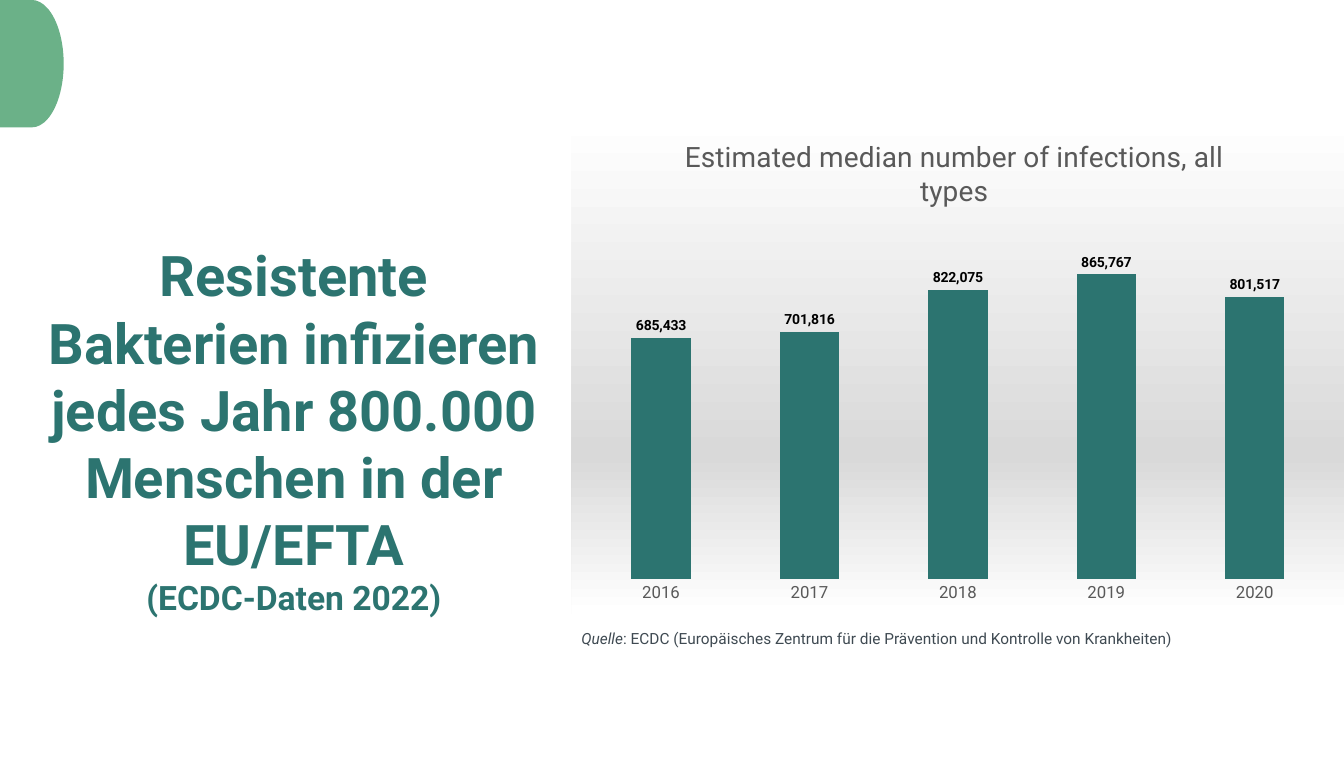
from lxml import etree
from pptx import Presentation
from pptx.chart.data import CategoryChartData
from pptx.dml.color import RGBColor
from pptx.enum.chart import XL_CHART_TYPE, XL_LABEL_POSITION, XL_TICK_MARK
from pptx.enum.shapes import MSO_SHAPE
from pptx.enum.text import MSO_ANCHOR, MSO_AUTO_SIZE, PP_ALIGN
from pptx.oxml import parse_xml
from pptx.oxml.ns import nsdecls, qn
from pptx.util import Pt

COLUMNS = XL_CHART_TYPE.COLUMN_CLUSTERED
OUTSIDE = XL_LABEL_POSITION.OUTSIDE_END
NO_TICK = XL_TICK_MARK.NONE
HALF_DISC = MSO_SHAPE.FLOWCHART_DELAY
TOP = MSO_ANCHOR.TOP
GROW = MSO_AUTO_SIZE.SHAPE_TO_FIT_TEXT
CENTER = PP_ALIGN.CENTER

TEAL = RGBColor(0x2C, 0x74, 0x70)
GREEN = RGBColor(0x6B, 0xB1, 0x88)
SLATE = RGBColor(0x3F, 0x4A, 0x52)
GREY = RGBColor(0x59, 0x59, 0x59)
BLACK = RGBColor(0, 0, 0)
FONT = "Roboto"

HEADLINE = [
    ("Resistente Bakterien infizieren jedes Jahr 800.000 Menschen in der EU/EFTA", 40),
    ("(ECDC-Daten 2022)", 24),
]
CHART_TITLE = "Estimated median number of infections, all types"
INFECTIONS = {"2016": 685433, "2017": 701816, "2018": 822075, "2019": 865767, "2020": 801517}
SOURCE = [
    ("Quelle", True),
    (": ECDC (Europäisches Zentrum für die Prävention und Kontrolle von Krankheiten)", False),
]
BACKDROP = [(0, "FFFFFF"), (68, "D9D9D9"), (100, "FFFFFF")]
PLOT_AREA = {"x": 0.02, "y": 0.22, "w": 0.96, "h": 0.71}
TITLE_SPOT = {"x": 0.14, "y": 0.03}
DISC_RADIUS = 45.5
CHART_LEFT = 408.2


def style(font, size, color, bold=False):
    font.name, font.size, font.bold = FONT, Pt(size), bold
    font.color.rgb = color


def set_layout(element, fractions, target=""):
    modes = "".join(f'<c:{k}Mode val="edge"/>' for k in "xy")
    values = "".join(f'<c:{k} val="{v}"/>' for k, v in fractions.items())
    for old in element.findall(qn("c:layout")):
        element.remove(old)
    layout = parse_xml(f'<c:layout {nsdecls("c")}><c:manualLayout>{target}{modes}{values}'
                       '</c:manualLayout></c:layout>')
    text = element.find(qn("c:tx"))
    if text is None:
        element.insert(0, layout)
    else:
        text.addnext(layout)


def add_headline(slide):
    headline = slide.shapes.title
    headline.left, headline.top, headline.width, headline.height = map(Pt, (23.8, 168.5, 372.2, 230.4))
    frame = headline.text_frame
    frame.word_wrap, frame.auto_size, frame.vertical_anchor = True, GROW, TOP
    for i, (line, size) in enumerate(HEADLINE):
        paragraph = frame.add_paragraph() if i else frame.paragraphs[0]
        paragraph.text, paragraph.alignment = line, CENTER
        style(paragraph.font, size, TEAL, True)


def add_infections(slide):
    data = CategoryChartData(number_format="#,##0")
    data.categories = list(INFECTIONS)
    data.add_series("Series 1", list(INFECTIONS.values()))
    place = map(Pt, (CHART_LEFT, 84.2, 552.2, 354.2))
    chart = slide.shapes.add_chart(COLUMNS, *place, data).chart
    style(chart.font, 10, BLACK)
    chart.has_legend = False

    heading = chart.chart_title.text_frame.paragraphs[0]
    heading.text = CHART_TITLE
    style(heading.font, 20, GREY)
    chart.chart_title.include_in_layout = False

    years = chart.category_axis
    years.major_tick_mark = years.minor_tick_mark = NO_TICK
    years.format.line.fill.background()
    style(years.tick_labels.font, 12, GREY)
    counts = chart.value_axis
    counts.visible = counts.has_major_gridlines = False
    counts.minimum_scale, counts.maximum_scale = 0, 1000000

    plot = chart.plots[0]
    plot.gap_width, plot.overlap, plot.vary_by_categories = 150, -25, False
    bars = plot.series[0].format.fill
    bars.solid()
    bars.fore_color.rgb = TEAL
    plot.has_data_labels = True
    labels = plot.data_labels
    labels.show_value, labels.position = True, OUTSIDE
    labels.number_format, labels.number_format_is_linked = "#,##0", False
    style(labels.font, 10, BLACK, True)

    stops = "".join(f'<a:gs pos="{pos * 1000}"><a:srgbClr val="{color}"/></a:gs>'
                    for pos, color in BACKDROP)
    body = chart._chartSpace.find(qn("c:chart"))
    body.addnext(parse_xml(
        f'<c:spPr {nsdecls("c", "a")}><a:gradFill><a:gsLst>{stops}</a:gsLst>'
        '<a:lin ang="5400000" scaled="0"/></a:gradFill><a:ln><a:noFill/></a:ln></c:spPr>'))
    set_layout(body.find(qn("c:plotArea")), PLOT_AREA, '<c:layoutTarget val="inner"/>')
    set_layout(body.find(qn("c:title")), TITLE_SPOT)
    corners = chart._chartSpace.find(qn("c:roundedCorners"))
    if corners is None:
        corners = etree.Element(qn("c:roundedCorners"))
        body.addprevious(corners)
        date = chart._chartSpace.find(qn("c:date1904"))
        if date is not None:
            date.addnext(corners)
    corners.set("val", "0")


def add_source(slide):
    frame = slide.shapes.add_textbox(*map(Pt, (CHART_LEFT, 445.7, 480.2, 20.9))).text_frame
    frame.word_wrap, frame.auto_size = True, GROW
    paragraph = frame.paragraphs[0]
    for words, italic in SOURCE:
        run = paragraph.add_run()
        run.text, run.font.italic = words, italic
    style(paragraph.font, 11, SLATE)


def main():
    deck = Presentation()
    deck.slide_width, deck.slide_height = Pt(960), Pt(540.7)
    slide = deck.slides.add_slide(deck.slide_layouts[5])
    disc = slide.shapes.add_shape(HALF_DISC, 0, 0, Pt(DISC_RADIUS), Pt(2 * DISC_RADIUS))
    disc.shadow.inherit = False
    disc.fill.solid()
    disc.fill.fore_color.rgb = GREEN
    disc.line.fill.background()
    add_headline(slide)
    add_infections(slide)
    add_source(slide)
    deck.save("out.pptx")


if __name__ == "__main__":
    main()
